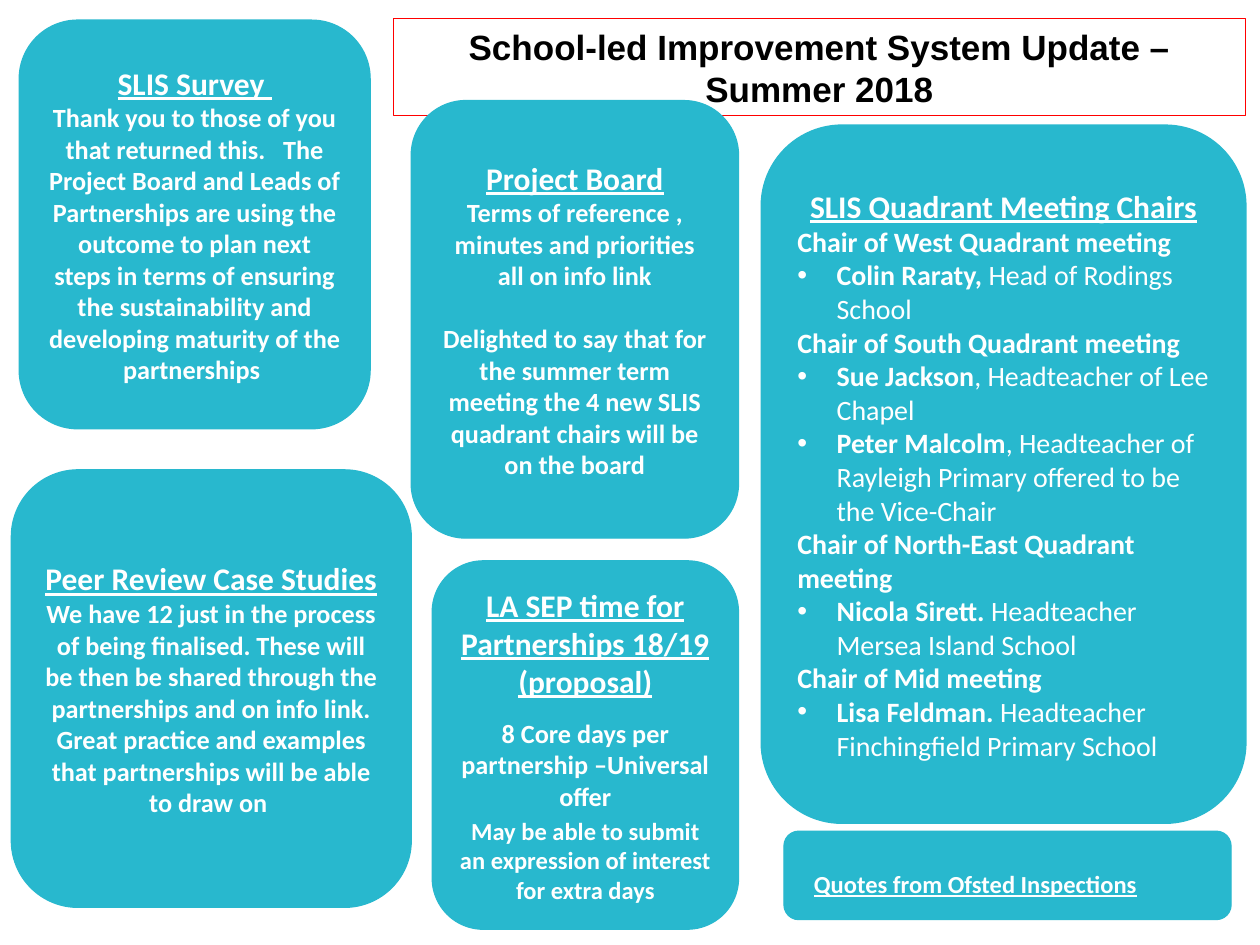
from lxml import etree
from pptx import Presentation
from pptx.dml.color import RGBColor
from pptx.enum.shapes import MSO_SHAPE
from pptx.enum.text import MSO_ANCHOR, PP_ALIGN
from pptx.oxml.ns import qn
from pptx.util import Pt

ROUNDED = MSO_SHAPE.ROUNDED_RECTANGLE
RECTANGLE = MSO_SHAPE.RECTANGLE
MIDDLE = MSO_ANCHOR.MIDDLE
CENTER = PP_ALIGN.CENTER
LEFT = PP_ALIGN.LEFT
COLORS = {"card": "28B8CE", "border": "FF0000", "title": "000000", "text": "FFFFFF"}
HEADING_SIZE = 18
BODY_SIZE = 15
CHAIR_SIZE = 16
BULLET_INDENT = 22.5

NOTE_CARDS = [
    ((11, 11.5, 200.5, 233.5), "SLIS Survey ", [
        ("Thank you to those of you that returned this.   The Project Board and Leads of "
         "Partnerships are using the outcome to plan next steps in terms of ensuring the "
         "sustainability and developing maturity of the partnerships ", BODY_SIZE, 0)]),
    ((235, 57.5, 187, 250), "Project Board", [
        ("Terms of reference , minutes and priorities all on info link", BODY_SIZE, 0),
        ("Delighted to say that for the summer term meeting the 4 new SLIS quadrant "
         "chairs will be on the board", BODY_SIZE, 18)]),
    ((6.5, 268.5, 228.5, 250), "Peer Review Case Studies", [
        ("We have 12 just in the process of being finalised. These will be then be shared "
         "through the partnerships and on info link. Great practice and examples that "
         "partnerships will be able to draw on ", BODY_SIZE, 0)]),
    ((247, 320.5, 175, 210.5), "LA SEP time for Partnerships 18/19 (proposal)", [
        ("8 Core days per partnership –Universal offer", BODY_SIZE, 10),
        ("May be able to submit an expression of interest for extra days", 14, 2.5)]),
]
CHAIRS = [
    ("Chair of West Quadrant meeting", [("Colin Raraty, ", "Head of Rodings School")]),
    ("Chair of South Quadrant meeting", [
        ("Sue Jackson", ", Headteacher of Lee Chapel"),
        ("Peter Malcolm", ", Headteacher of Rayleigh Primary offered to be the Vice-Chair")]),
    ("Chair of North-East Quadrant meeting", [
        ("Nicola Sirett. ", "Headteacher Mersea Island School")]),
    ("Chair of Mid meeting", [
        ("Lisa Feldman. ", "Headteacher Finchingfield Primary School")]),
]


def rgb(name):
    """Return the named colour."""
    return RGBColor.from_string(COLORS[name])


def add_run(paragraph, text, size, bold=True, underline=False, font="Calibri", color="text"):
    """Append a formatted run to a paragraph."""
    run = paragraph.add_run()
    run.text = text
    run.font.name = font
    run.font.size = Pt(size)
    run.font.bold = bold
    run.font.underline = underline
    run.font.color.rgb = rgb(color)


def add_bullet(paragraph):
    """Give a paragraph a hanging bullet."""
    properties = paragraph._p.get_or_add_pPr()
    properties.set("marL", str(Pt(BULLET_INDENT)))
    properties.set("indent", str(-Pt(BULLET_INDENT)))
    etree.SubElement(properties, qn("a:buFont")).set("typeface", "Arial")
    etree.SubElement(properties, qn("a:buChar")).set("char", "•")


def add_panel(slide, box, kind, line, fill=None):
    """Add a shadowless outlined panel with wrapped, vertically centred text."""
    shape = slide.shapes.add_shape(kind, *map(Pt, box))
    shape.shadow.inherit = False
    if fill:
        shape.fill.solid()
        shape.fill.fore_color.rgb = rgb(fill)
    else:
        shape.fill.background()
    shape.line.color.rgb = rgb(line)
    shape.line.width = Pt(0.75)
    shape.text_frame.word_wrap = True
    shape.text_frame.vertical_anchor = MIDDLE
    return shape


def add_card(slide, box, heading):
    """Add a rounded card with an underlined heading and return its text frame."""
    text_frame = add_panel(slide, box, ROUNDED, "card", "card").text_frame
    paragraph = text_frame.paragraphs[0]
    paragraph.alignment = CENTER
    add_run(paragraph, heading, HEADING_SIZE, underline=True)
    return text_frame


def add_title(slide, box):
    """Add the framed slide title."""
    paragraph = add_panel(slide, box, RECTANGLE, "border").text_frame.paragraphs[0]
    paragraph.alignment = CENTER
    add_run(paragraph, "School-led Improvement System Update – Summer 2018", 20,
            font="Arial", color="title")


def add_note_card(slide, box, heading, notes):
    """Add a card of centred notes."""
    text_frame = add_card(slide, box, heading)
    for text, size, gap in notes:
        paragraph = text_frame.add_paragraph()
        paragraph.alignment = CENTER
        paragraph.space_before = Pt(gap)
        add_run(paragraph, text, size)


def add_chairs_card(slide, box):
    """Add the card listing the chairs of each quadrant."""
    text_frame = add_card(slide, box, "SLIS Quadrant Meeting Chairs")
    for meeting, people in CHAIRS:
        paragraph = text_frame.add_paragraph()
        paragraph.alignment = LEFT
        add_run(paragraph, meeting, CHAIR_SIZE)
        for name, role in people:
            paragraph = text_frame.add_paragraph()
            paragraph.alignment = LEFT
            add_bullet(paragraph)
            add_run(paragraph, name, CHAIR_SIZE)
            add_run(paragraph, role, CHAIR_SIZE, bold=False)


def add_quotes_card(slide, box):
    """Add the quotes card with its label."""
    left, top, width, height = box
    add_panel(slide, box, ROUNDED, "card", "card")
    label = slide.shapes.add_textbox(Pt(left + 10), Pt(top + 18), Pt(width - 20), Pt(24.5))
    label.text_frame.word_wrap = True
    add_run(label.text_frame.paragraphs[0], "Quotes from Ofsted Inspections", 14, underline=True)


def main():
    """Build and save the slide."""
    presentation = Presentation()
    presentation.slide_width = Pt(720)
    presentation.slide_height = Pt(540)
    slide = presentation.slides.add_slide(presentation.slide_layouts[6])
    add_title(slide, (224.75, 10.75, 487, 55.5))
    for box, heading, notes in NOTE_CARDS:
        add_note_card(slide, box, heading, notes)
    add_chairs_card(slide, (435, 71.5, 277, 399))
    add_quotes_card(slide, (448, 475, 255.5, 50.5))
    presentation.save("out.pptx")


if __name__ == "__main__":
    main()
